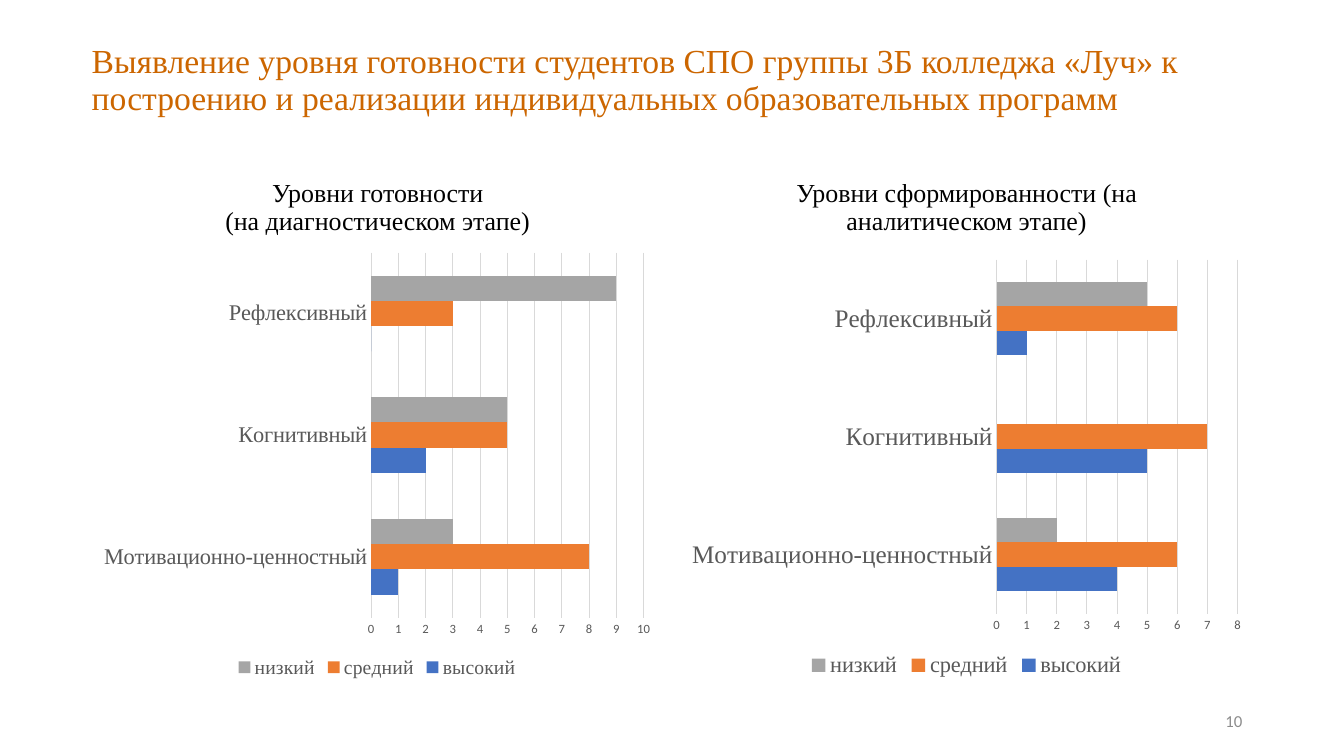
from dataclasses import dataclass

from pptx import Presentation
from pptx.chart.data import CategoryChartData
from pptx.dml.color import RGBColor
from pptx.enum.chart import XL_CHART_TYPE, XL_LEGEND_POSITION, XL_TICK_MARK
from pptx.enum.text import MSO_ANCHOR, MSO_AUTO_SIZE, PP_ALIGN
from pptx.util import Inches, Pt

BAR_CLUSTERED = XL_CHART_TYPE.BAR_CLUSTERED
LEGEND_BOTTOM = XL_LEGEND_POSITION.BOTTOM
NO_TICKS = XL_TICK_MARK.NONE
MIDDLE, BOTTOM = MSO_ANCHOR.MIDDLE, MSO_ANCHOR.BOTTOM
LEFT, CENTER, RIGHT = PP_ALIGN.LEFT, PP_ALIGN.CENTER, PP_ALIGN.RIGHT
NO_AUTOFIT = MSO_AUTO_SIZE.NONE
TITLE_ONLY = 5


@dataclass(frozen=True)
class Theme:
    serif: str = "Times New Roman"
    sans: str = "Calibri"
    title_color: str = "CC6600"
    heading_color: str = "000000"
    number_color: str = "8C8C8C"
    label_color: str = "595959"
    grid_color: str = "D9D9D9"
    level_colors: tuple = ("4472C4", "ED7D31", "A5A5A5")
    title_size: float = 24
    heading_size: float = 18.5
    number_size: float = 12
    chart_size: float = 10
    value_size: float = 9


class SlideBuilder:
    def __init__(self, slide, theme):
        self.slide = slide
        self.theme = theme

    def style_font(self, font, size, color, name):
        font.size = Pt(size)
        font.bold = False
        font.color.rgb = RGBColor.from_string(color)
        font.name = name

    def fill_text(self, shape, text, size, color, name, align, anchor, line_spacing=1.0):
        frame = shape.text_frame
        frame.text = text
        frame.word_wrap = True
        frame.auto_size = NO_AUTOFIT
        frame.vertical_anchor = anchor
        for paragraph in frame.paragraphs:
            paragraph.alignment = align
            paragraph.line_spacing = line_spacing
            for run in paragraph.runs:
                self.style_font(run.font, size, color, name)

    def title(self, box, text):
        shape = self.slide.shapes.title
        shape.left, shape.top, shape.width, shape.height = map(Inches, box)
        theme = self.theme
        self.fill_text(shape, text, theme.title_size, theme.title_color,
                       theme.serif, LEFT, MIDDLE, 0.9)

    def heading(self, box, text):
        shape = self.slide.shapes.add_textbox(*map(Inches, box))
        theme = self.theme
        self.fill_text(shape, text, theme.heading_size, theme.heading_color,
                       theme.serif, CENTER, BOTTOM, 0.9)
        shape.text_frame.paragraphs[0].space_before = Pt(10)

    def slide_number(self, box, text):
        shape = self.slide.shapes.add_textbox(*map(Inches, box))
        theme = self.theme
        self.fill_text(shape, text, theme.number_size, theme.number_color,
                       theme.sans, RIGHT, MIDDLE)

    def style_line(self, line):
        line.color.rgb = RGBColor.from_string(self.theme.grid_color)
        line.width = Pt(0.75)

    def bar_chart(self, box, categories, levels, maximum, category_size, legend_size):
        theme = self.theme
        chart_data = CategoryChartData()
        chart_data.categories = categories
        for name, values in levels.items():
            chart_data.add_series(name, values)
        chart = self.slide.shapes.add_chart(
            BAR_CLUSTERED, *map(Inches, box), chart_data).chart
        chart.has_title = False
        self.style_font(chart.font, theme.chart_size, theme.heading_color, theme.sans)

        plot = chart.plots[0]
        plot.vary_by_categories = False
        plot.gap_width = 182
        plot.overlap = 0
        for series, color in zip(plot.series, theme.level_colors):
            series.format.fill.solid()
            series.format.fill.fore_color.rgb = RGBColor.from_string(color)

        category_axis, value_axis = chart.category_axis, chart.value_axis
        for axis in (category_axis, value_axis):
            axis.major_tick_mark = NO_TICKS
            axis.minor_tick_mark = NO_TICKS
        self.style_font(category_axis.tick_labels.font, category_size,
                        theme.label_color, theme.serif)
        self.style_line(category_axis.format.line)
        self.style_font(value_axis.tick_labels.font, theme.value_size,
                        theme.label_color, theme.sans)
        value_axis.minimum_scale = 0
        value_axis.maximum_scale = maximum
        value_axis.major_unit = 1
        value_axis.format.line.fill.background()
        self.style_line(value_axis.major_gridlines.format.line)

        chart.has_legend = True
        chart.legend.position = LEGEND_BOTTOM
        chart.legend.include_in_layout = False
        self.style_font(chart.legend.font, legend_size, theme.label_color, theme.serif)


def main():
    presentation = Presentation()
    presentation.slide_width = Inches(13.33)
    presentation.slide_height = Inches(7.5)
    slide = presentation.slides.add_slide(presentation.slide_layouts[TITLE_ONLY])
    builder = SlideBuilder(slide, Theme())

    builder.title((0.81, 0.21, 11.5, 1.19),
                  "Выявление уровня готовности студентов СПО группы 3Б колледжа «Луч» "
                  "к построению и реализации индивидуальных образовательных программ")
    builder.heading((2.02, 1.49, 3.45, 0.9),
                    "Уровни готовности\v(на диагностическом этапе)")
    builder.heading((7.74, 1.49, 3.69, 0.9),
                    "Уровни сформированности (на аналитическом этапе)")
    builder.slide_number((9.42, 6.95, 3, 0.4), "10")

    components = ("Мотивационно-ценностный", "Когнитивный", "Рефлексивный")
    diagnostic = {"высокий": (1, 2, 0), "средний": (8, 5, 3), "низкий": (3, 5, 9)}
    analytic = {"высокий": (4, 5, 1), "средний": (6, 7, 6), "низкий": (2, 0, 5)}
    builder.bar_chart((0.92, 2.42, 5.64, 4.35), components, diagnostic,
                      maximum=10, category_size=16, legend_size=14)
    builder.bar_chart((6.75, 2.49, 5.67, 4.28), components, analytic,
                      maximum=8, category_size=18, legend_size=16)

    presentation.save("out.pptx")


if __name__ == "__main__":
    main()
